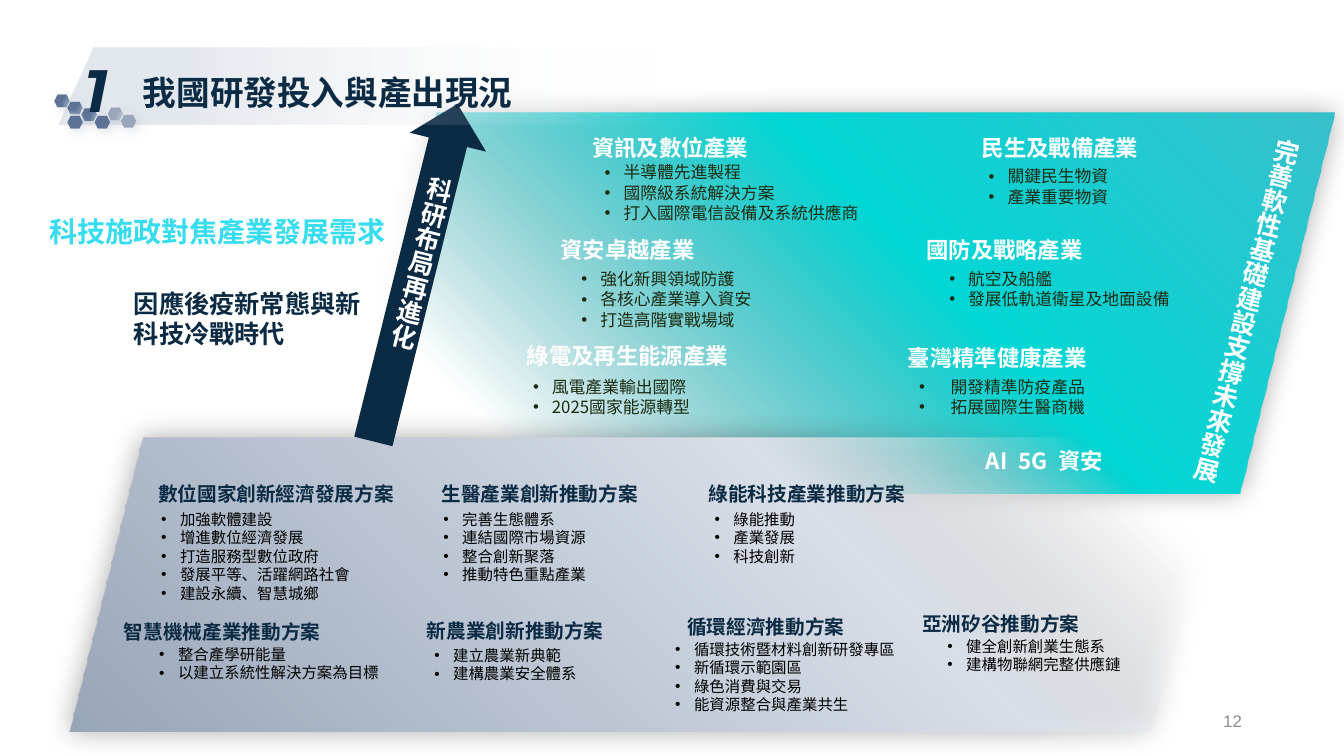
from lxml.etree import SubElement
from pptx import Presentation
from pptx.dml.color import RGBColor
from pptx.enum.shapes import MSO_SHAPE as Shape
from pptx.enum.text import MSO_ANCHOR as Anchor, MSO_AUTO_SIZE as AutoSize, PP_ALIGN as Align
from pptx.oxml.ns import qn
from pptx.util import Pt

NAVY = RGBColor(0x0B, 0x2A, 0x43)
WHITE = RGBColor(0xFF, 0xFF, 0xFF)
BLACK = RGBColor(0x00, 0x00, 0x00)
CYAN = RGBColor(0x38, 0xDC, 0xEF)
TEAL = RGBColor(0x39, 0xBF, 0xCC)
BRIGHT_TEAL = RGBColor(0x01, 0xD7, 0xD5)
PALE = RGBColor(0xD9, 0xDF, 0xE8)
SLATE = RGBColor(0x97, 0xA5, 0xB8)
MIST = RGBColor(0xA2, 0xB1, 0xC6)
OLIVE = RGBColor(0x1C, 0x2B, 0x12)
GREY = RGBColor(0x8C, 0x8C, 0x8C)
HEX_DARK = RGBColor(0x5C, 0x73, 0x96)
HEX_LIGHT = RGBColor(0x99, 0xA6, 0xBB)
CJK = "Noto Sans CJK SC"

# heading, left, top, width, alignment, bullet left, bullet top, bullets
INDUSTRIES = [
    ("資訊及數位產業", 409.7, 92.2, 132, Align.RIGHT, 424.8, 112.3,
     ["半導體先進製程", "國際級系統解決方案", "打入國際電信設備及系統供應商"]),
    ("資安卓越產業", 392.4, 164.9, 110.9, Align.RIGHT, 408.2, 188.6,
     ["強化新興領域防護", "各核心產業導入資安", "打造高階實戰場域"]),
    ("綠電及再生能源產業", 366.5, 241.2, 160.6, Align.RIGHT, 373.7, 265.7,
     ["風電產業輸出國際", "2025國家能源轉型"]),
    ("民生及戰備產業", 684, 92.2, 136.1, Align.RIGHT, 699.1, 115.2,
     ["關鍵民生物資", "產業重要物資"]),
    ("國防及戰略產業", 644.4, 164.9, 136.1, Align.RIGHT, 671, 188.6,
     ["航空及船艦", "發展低軌道衛星及地面設備"]),
    ("臺灣精準健康產業", 635, 242.6, 148.3, Align.RIGHT, 649.4, 265.7,
     ["開發精準防疫產品", "拓展國際生醫商機"]),
]
PROGRAMS = [
    ("數位國家創新經濟發展方案", 110.9, 344.2, 170.6, Align.RIGHT, 108, 360.7,
     ["加強軟體建設", "增進數位經濟發展", "打造服務型數位政府",
      "發展平等、活躍網路社會", "建設永續、智慧城鄉"]),
    ("生醫產業創新推動方案", 309.6, 344.2, 151.9, Align.CENTER, 309.6, 360.7,
     ["完善生態體系", "連結國際市場資源", "整合創新聚落", "推動特色重點產業"]),
    ("綠能科技產業推動方案", 506.2, 344.2, 161.3, Align.LEFT, 503.3, 360.7,
     ["綠能推動", "產業發展", "科技創新"]),
    ("智慧機械產業推動方案", 67.7, 442.8, 161.3, Align.RIGHT, 106.6, 457.2,
     ["整合產學研能量", "以建立系統性解決方案為目標"]),
    ("新農業創新推動方案", 270, 442.1, 161.3, Align.RIGHT, 303.1, 457.9,
     ["建立農業新典範", "建構農業安全體系"]),
    ("循環經濟推動方案", 491, 439.2, 161.3, Align.LEFT, 475.2, 453.6,
     ["循環技術暨材料創新研發專區", "新循環示範園區", "綠色消費與交易", "能資源整合與產業共生"]),
    ("亞洲矽谷推動方案", 658.8, 437, 161.3, Align.LEFT, 669.6, 451.4,
     ["健全創新創業生態系", "建構物聯網完整供應鏈"]),
]
HEXAGONS = [(38.9, 67.7, HEX_DARK), (48.2, 72.7, HEX_DARK), (58.3, 77.4, HEX_DARK),
            (77, 77, HEX_LIGHT), (86.4, 82.1, HEX_LIGHT),
            (48.2, 82.8, HEX_DARK), (67.7, 82.8, HEX_DARK)]


def add_color(parent, color, alpha):
    node = SubElement(parent, qn("a:srgbClr"), val=str(color))
    SubElement(node, qn("a:alpha"), val=str(alpha * 1000))


def set_gradient(shape, stops, angle):
    """Stops are (position, colour, opacity), all in percent."""
    shape.fill.gradient()
    grad = shape.fill._xPr.find(qn("a:gradFill"))
    for child in list(grad):
        grad.remove(child)
    stop_list = SubElement(grad, qn("a:gsLst"))
    for position, color, alpha in stops:
        add_color(SubElement(stop_list, qn("a:gs"), pos=str(position * 1000)), color, alpha)
    SubElement(grad, qn("a:lin"), ang=str(angle * 60000), scaled="0")


def set_shadow(shape, color, alpha, blur, distance=0, angle=0):
    shape.shadow.inherit = False
    effects = shape._element.spPr.find(qn("a:effectLst"))
    outer = SubElement(effects, qn("a:outerShdw"), blurRad=str(Pt(blur)), dist=str(Pt(distance)),
                       dir=str(angle * 60000), algn="ctr", rotWithShape="0")
    add_color(outer, color, alpha)


def add_shape(page, kind, box, color=None):
    shape = page.shapes.add_shape(kind, *map(Pt, box))
    shape.shadow.inherit = False
    shape.line.fill.background()
    if color is not None:
        shape.fill.solid()
        shape.fill.fore_color.rgb = color
    return shape


def add_text(page, box, lines, size, color, bold=True, align=Align.LEFT, font=CJK,
             grow=True, indent=0, spacing=None):
    """Write one paragraph per line; a positive indent makes them bullets."""
    text_box = page.shapes.add_textbox(*map(Pt, box))
    frame = text_box.text_frame
    frame.word_wrap = True
    frame.auto_size = AutoSize.SHAPE_TO_FIT_TEXT if grow else AutoSize.NONE
    frame.text = "\n".join(lines)
    for para in frame.paragraphs:
        para.alignment = align
        if spacing:
            para.line_spacing = spacing
        if indent:
            props = para._p.get_or_add_pPr()
            props.set("marL", str(Pt(indent)))
            props.set("indent", str(-Pt(indent)))
            SubElement(props, qn("a:buFont"), typeface="Arial")
            SubElement(props, qn("a:buChar"), char="•")
        for span in para.runs:
            span.font.size, span.font.bold, span.font.name = Pt(size), bold, font
            span.font.color.rgb = color
            SubElement(span._r.get_or_add_rPr(), qn("a:ea"), typeface=font)
    return text_box


def set_margins(frame, side, end):
    frame.margin_left = frame.margin_right = Pt(side)
    frame.margin_top = frame.margin_bottom = Pt(end)


def add_bullets(page, left, top, lines, size, color, indent=13.5):
    width = max(map(len, lines)) * size + indent + 16
    height = len(lines) * size * 1.21 + 7.2
    add_text(page, (left, top, width, height), lines, size, color, bold=False, indent=indent)


def add_vertical_text(page, box, text, angle):
    label = add_text(page, box, [text], 18, WHITE)
    label.text_frame._txBody.bodyPr.set("vert", "eaVert")
    label.rotation = angle


def add_panel(page, box, stops):
    panel = add_shape(page, Shape.PARALLELOGRAM, box)
    set_gradient(panel, stops, 135)
    set_shadow(panel, BLACK, 33, 20)


def add_industries(page):
    for heading, left, top, width, align, list_left, list_top, lines in INDUSTRIES:
        add_text(page, (left, top, width, 26.6), [heading], 16, WHITE, align=align)
        indent = 22.5 if heading.startswith("臺灣") else 13.5
        add_bullets(page, list_left, list_top, lines, 12, OLIVE, indent)


def add_programs(page):
    for heading, left, top, width, align, list_left, list_top, lines in PROGRAMS:
        title = add_text(page, (left, top, width, 23.8), [heading], 14, NAVY,
                         align=align, grow=False)
        set_margins(title.text_frame, 0, 0)
        add_bullets(page, list_left, list_top, lines, 11, BLACK)


def add_arrow(page, box):
    left, top, width, height = box
    add_shape(page, Shape.DOWN_ARROW, box, NAVY).rotation = 194
    add_vertical_text(page, (left - 0.7, top + 45.3, 36, 233.3), "科研布局再進化", 13.9)


def add_title_band(page, left, top, width, height):
    builder = page.shapes.build_freeform(Pt(left), Pt(top + height))
    builder.add_line_segments([(Pt(left + 25.2), Pt(top)), (Pt(left + width), Pt(top)),
                               (Pt(left + width), Pt(top + height))], close=True)
    band = builder.convert_to_shape()
    band.shadow.inherit = False
    band.line.fill.background()
    set_gradient(band, [(38, WHITE, 0), (88, MIST, 30)], 180)


def add_section_mark(page, box):
    for left, top, color in HEXAGONS:
        for glow, blur, angle in ((MIST, 8, 45), (WHITE, 4, 225)):
            cell = add_shape(page, Shape.HEXAGON, (left, top, 10.8, 8.9), color)
            set_shadow(cell, glow, 40, blur, 3, angle)
    number = add_text(page, box, ["1"], 42.7, NAVY, align=Align.CENTER,
                      font="Montserrat", grow=False)
    number.text_frame.paragraphs[0].runs[0].font.italic = True
    number.text_frame.vertical_anchor = Anchor.MIDDLE
    set_margins(number.text_frame, 0, 5)


def add_keywords(page, box):
    label = add_text(page, box, ["AI 5G 資安"], 16, WHITE, align=Align.CENTER)
    label.text_frame.paragraphs[0].runs[0].text = "AI"
    first = label.text_frame.paragraphs[0].runs[0]
    for text in (" ", "5G", " ", "資安"):
        span = label.text_frame.paragraphs[0].add_run()
        span.text = text
        span.font.size, span.font.bold, span.font.name = first.font.size, True, CJK
        span.font.color.rgb = WHITE
        props = span._r.get_or_add_rPr()
        SubElement(props, qn("a:ea"), typeface=CJK)
        if text == " ":
            props.set("spc", "400")


def main():
    deck = Presentation()
    deck.slide_width, deck.slide_height = Pt(960), Pt(540)
    page = deck.slides.add_slide(deck.slide_layouts[6])
    add_panel(page, (244, 80.6, 709.2, 272.2),
              [(0, TEAL, 100), (41, BRIGHT_TEAL, 100), (84, TEAL, 0)])
    add_panel(page, (49.7, 312.5, 823.7, 210.2),
              [(10, WHITE, 0), (33, PALE, 100), (100, SLATE, 100)])
    add_programs(page)
    add_industries(page)
    add_arrow(page, (268.6, 70.6, 56.2, 248.4))
    add_text(page, (88.6, 202.3, 186.5, 51), ["因應後疫新常態與新科技冷戰時代"], 18, NAVY)
    add_vertical_text(page, (866.9, 87.8, 36, 281.5), "完善軟性基礎建設支撐未來發展", 14.1)
    add_title_band(page, 41.8, 34, 692, 54.6)
    demand = add_text(page, (28.1, 139.7, 436, 39.6), ["科技施政對焦產業發展需求"],
                      20, CYAN, spacing=1.5)
    demand.text_frame.vertical_anchor = Anchor.MIDDLE
    add_section_mark(page, (34.6, 33.1, 67.7, 60.5))
    add_keywords(page, (651.6, 316.1, 188.6, 26.6))
    add_text(page, (95, 33.1, 303.8, 46.1), ["我國研發投入與產出現況"], 24, NAVY, spacing=1.5)
    page_number = add_text(page, (678.2, 500.4, 216, 28.8), ["12"], 12, GREY, bold=False,
                           align=Align.RIGHT, font="Arial", grow=False)
    page_number.text_frame.vertical_anchor = Anchor.MIDDLE
    deck.save("out.pptx")


if __name__ == "__main__":
    main()
